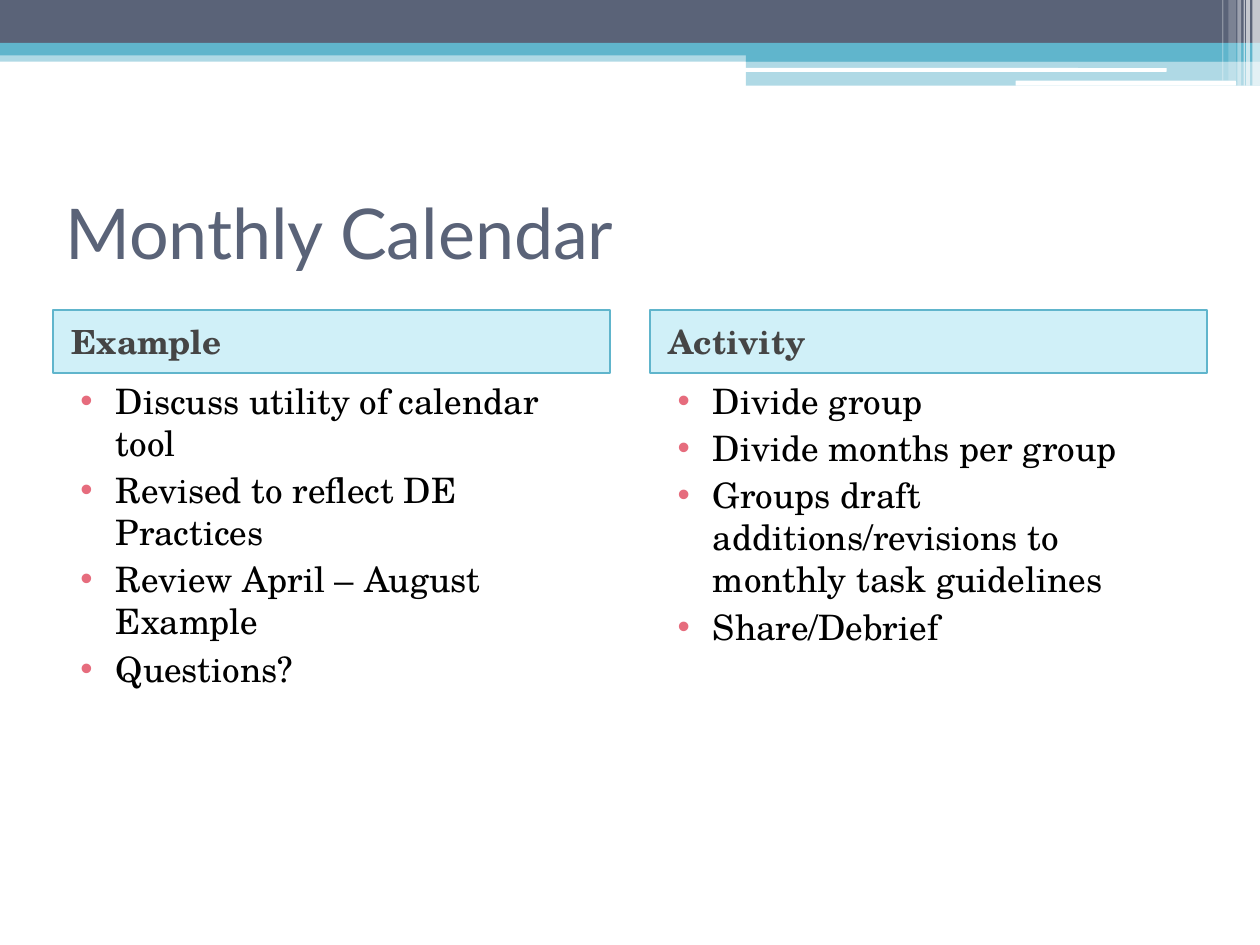
from lxml import etree
from pptx import Presentation
from pptx.dml.color import RGBColor
from pptx.enum.shapes import MSO_SHAPE
from pptx.enum.text import MSO_ANCHOR, PP_ALIGN
from pptx.oxml.ns import qn
from pptx.util import Inches, Pt

RECT, ROUNDED = MSO_SHAPE.RECTANGLE, MSO_SHAPE.ROUNDED_RECTANGLE
TOP, MIDDLE = MSO_ANCHOR.TOP, MSO_ANCHOR.MIDDLE
LEFT = PP_ALIGN.LEFT

SLATE, TEAL, WHITE = "5A6378", "60B5CC", "FFFFFF"
SKY, GRAY, BLACK, ROSE = "45C4E7", "454545", "000000", "E66C7D"

TITLE = "Monthly Calendar"
COLUMNS = [
    ("Example", [
        "Discuss utility of calendar tool",
        "Revised to reflect DE Practices",
        "Review April – August Example",
        "Questions?",
    ]),
    ("Activity", [
        "Divide group",
        "Divide months per group",
        "Groups draft additions/revisions to monthly task guidelines",
        "Share/Debrief",
    ]),
]

# preset, left, top, width, height, colour, opacity in percent
BANDS = [
    (RECT, 0, 0.4, 10, 0.09, TEAL, 50),
    (RECT, 0, 0, 10, 0.34, SLATE, 100),
    (RECT, 0, 0.34, 10, 0.1, TEAL, 100),
    (RECT, 5.92, 0.39, 4.08, 0.1, TEAL, 100),
    (RECT, 5.92, 0.48, 4.08, 0.2, TEAL, 50),
    (ROUNDED, 5.91, 0.54, 3.35, 0.03, WHITE, 100),
    (ROUNDED, 8.06, 0.64, 1.75, 0.04, WHITE, 100),
]
# left, width, height, opacity in percent
STRIPES = [
    (9.94, 0.06, 0.68, 65),
    (9.89, 0.03, 0.68, 65),
    (9.87, 0.01, 0.68, 60),
    (9.82, 0.03, 0.68, 40),
    (9.75, 0.06, 0.64, 20),
    (9.7, 0.01, 0.64, 30),
]

MARGIN, COLUMN_WIDTH, COLUMN_STEP = 0.42, 4.42, 4.74
HEADER_TOP, HEADER_HEIGHT, LIST_HEIGHT = 2.46, 0.5, 4.25

TITLE_FONT = {"name": "Lato", "size": Pt(40)}
HEADER_FONT = {"name": "TeX Gyre Schola", "size": Pt(19), "bold": True}
LIST_FONT = {"name": "TeX Gyre Schola", "size": Pt(20)}


def rgb(color):
    return RGBColor.from_string(color)


def add_block(slide, preset, box, color, opacity=100):
    block = slide.shapes.add_shape(preset, *map(Inches, box))
    block.shadow.inherit = False
    block.line.fill.background()
    block.fill.solid()
    block.fill.fore_color.rgb = rgb(color)
    if opacity < 100:
        tint = block.fill._xPr.find(f".//{qn('a:srgbClr')}")
        etree.SubElement(tint, qn("a:alpha"), val=str(opacity * 1000))
    return block


def add_bullet(paragraph):
    properties = paragraph._p.get_or_add_pPr()
    bullet_color = etree.SubElement(properties, qn("a:buClr"))
    etree.SubElement(bullet_color, qn("a:srgbClr"), val=ROSE)
    etree.SubElement(properties, qn("a:buFont"), typeface="Arial")
    etree.SubElement(properties, qn("a:buChar"), char="•")


def write(frame, lines, font, color, anchor=MIDDLE, before=0, indent=(0, 0), bullets=False):
    frame.word_wrap = True
    frame.vertical_anchor = anchor
    for index, line in enumerate(lines):
        paragraph = frame.add_paragraph() if index else frame.paragraphs[0]
        paragraph.alignment = LEFT
        paragraph.space_before = Pt(before)
        properties = paragraph._p.get_or_add_pPr()
        for key, inches in zip(("marL", "indent"), indent):
            properties.set(key, str(Inches(inches)))
        if bullets:
            add_bullet(paragraph)
        run = paragraph.add_run()
        run.text = line
        for key, value in font.items():
            setattr(run.font, key, value)
        run.font.color.rgb = rgb(color)


def add_column(slide, left, header, items):
    heading = add_block(slide, RECT, (left, HEADER_TOP, COLUMN_WIDTH, HEADER_HEIGHT), SKY, 25)
    heading.line.color.rgb = rgb(TEAL)
    heading.line.width = Pt(1)
    write(heading.text_frame, [header], HEADER_FONT, GRAY, before=3, indent=(0.05, 0))

    list_box = (left, HEADER_TOP + HEADER_HEIGHT, COLUMN_WIDTH, LIST_HEIGHT)
    points = slide.shapes.add_textbox(*map(Inches, list_box))
    write(points.text_frame, items, LIST_FONT, BLACK, anchor=TOP, before=3,
          indent=(0.4, -0.28), bullets=True)


def main():
    deck = Presentation()
    deck.slide_width, deck.slide_height = Inches(10), Inches(7.5)
    slide = deck.slides.add_slide(deck.slide_layouts[6])

    for preset, *box, color, opacity in BANDS:
        add_block(slide, preset, box, color, opacity)
    for left, width, height, opacity in STRIPES:
        add_block(slide, RECT, (left, 0, width, height), WHITE, opacity)

    title = slide.shapes.add_textbox(*map(Inches, (MARGIN, 1.25, 9.17, 1.17)))
    write(title.text_frame, [TITLE], TITLE_FONT, SLATE)
    for index, (header, items) in enumerate(COLUMNS):
        add_column(slide, MARGIN + index * COLUMN_STEP, header, items)

    deck.save("out.pptx")


if __name__ == "__main__":
    main()
